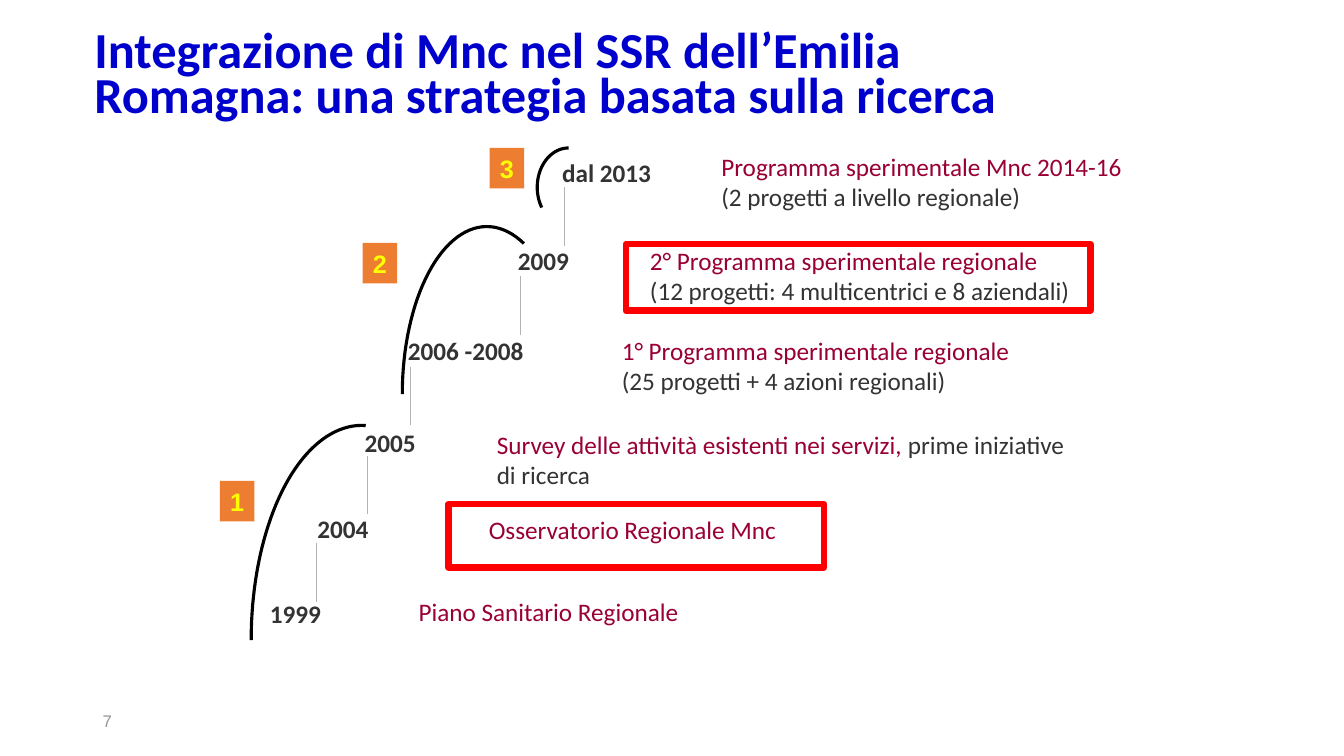
from dataclasses import dataclass
from math import cos, radians, sin

from lxml.etree import SubElement
from pptx import Presentation
from pptx.dml.color import RGBColor
from pptx.enum.shapes import MSO_CONNECTOR, MSO_SHAPE
from pptx.enum.text import MSO_ANCHOR, PP_ALIGN
from pptx.oxml.ns import qn
from pptx.util import Cm, Pt


@dataclass(frozen=True)
class Theme:
    title: str = "0000CC"
    accent: str = "990033"
    body: str = "333333"
    number: str = "969696"
    step: str = "B2B2B2"
    badge: str = "ED7D31"
    badge_text: str = "FFFF00"
    arc: str = "000000"
    frame: str = "FF0000"
    font: str = "Calibri"
    plain_font: str = "Arial"
    title_size: int = 36
    text_size: int = 18
    number_size: int = 12


THEME = Theme()
LINE_HEIGHT = 1.02
STEP_HEIGHT = 1.47

# Year, left, top, width
YEARS = [
    ("dal 2013", 13.92, 3.84, 4.01),
    ("2009", 12.8, 6.05, 1.8),
    ("2006 -2008", 10.03, 8.33, 3.6),
    ("2005", 8.94, 10.64, 1.8),
    ("2004", 7.75, 12.8, 1.8),
    ("1999", 6.55, 14.94, 1.8),
]
# Left, top, width, paragraphs of (text, colour) spans
MILESTONES = [
    (17.93, 3.68, 11.2, [[("Programma sperimentale Mnc 2014-16", THEME.accent)],
                         [("(2 progetti a livello regionale)", THEME.body)]]),
    (16.13, 6.05, 11.2, [[("2° Programma sperimentale regionale", THEME.accent)],
                         [("(12 progetti: 4 multicentrici e 8 aziendali)", THEME.body)]]),
    (15.42, 8.33, 11.51, [[("1° Programma sperimentale regionale", THEME.accent)],
                          [("(25 progetti + 4 azioni regionali)", THEME.body)]]),
    (12.27, 10.69, 15.06, [[("Survey delle attività esistenti nei servizi, ", THEME.accent),
                            ("prime iniziative di ricerca", THEME.body)]]),
    (12.07, 12.83, 12.87, [[("Osservatorio Regionale Mnc", THEME.accent)]]),
    (10.3, 14.91, 7.8, [[("Piano Sanitario Regionale", THEME.accent)]]),
]
# Left, top of each riser between two years
STEPS = [(14.22, 4.72), (13.11, 6.96), (10.34, 9.25), (9.25, 11.48), (7.98, 13.69)]
BADGES = [("1", 5.54, 12.12), ("2", 9.14, 6.12), ("3", 12.34, 3.73)]
# Centre x and y, radius x and y, start and end angle
ARCS = [
    (12.27, 9.93, 2.13, 4.22, 64, 180),
    (9.12, 16.13, 2.79, 5.41, 88, 180),
    (14.33, 4.72, 0.79, 0.99, 90, 211),
]
FRAMES = [(11.3, 12.7, 9.47, 1.6), (15.77, 6.15, 11.71, 1.68)]


def color(value):
    return RGBColor.from_string(value)


def style_font(font, size, value, name=THEME.font, bold=False):
    font.size = Pt(size)
    font.name = name
    font.bold = bold
    font.color.rgb = color(value)


def add_text(page, left, top, width, height, paragraphs, size=THEME.text_size,
             name=THEME.font, bold=False, anchor=MSO_ANCHOR.TOP):
    box = page.shapes.add_textbox(Cm(left), Cm(top), Cm(width), Cm(height))
    frame = box.text_frame
    frame.word_wrap = True
    frame.vertical_anchor = anchor
    for index, spans in enumerate(paragraphs):
        para = frame.add_paragraph() if index else frame.paragraphs[0]
        for text, value in spans:
            span = para.add_run()
            span.text = text
            style_font(span.font, size, value, name, bold)
    return box


def add_step(page, left, top):
    line = page.shapes.add_connector(MSO_CONNECTOR.STRAIGHT, Cm(left), Cm(top + STEP_HEIGHT),
                                     Cm(left), Cm(top))
    line.line.color.rgb = color(THEME.step)
    line.line.width = Pt(0.75)
    SubElement(line._element.spPr, qn("a:effectLst"))


def add_badge(page, text, left, top):
    badge = page.shapes.add_shape(MSO_SHAPE.RECTANGLE, Cm(left), Cm(top), Cm(0.87), Cm(LINE_HEIGHT))
    badge.shadow.inherit = False
    badge.fill.solid()
    badge.fill.fore_color.rgb = color(THEME.badge)
    badge.line.fill.background()
    frame = badge.text_frame
    frame.word_wrap = False
    frame.text = text
    para = frame.paragraphs[0]
    para.alignment = PP_ALIGN.CENTER
    style_font(para.runs[0].font, THEME.text_size, THEME.badge_text, THEME.plain_font, True)


def style_outline(shape, value, width):
    shape.shadow.inherit = False
    shape.fill.background()
    shape.line.color.rgb = color(value)
    shape.line.width = Pt(width)


def add_arc(page, center_x, center_y, radius_x, radius_y, start, end, pieces=40):
    angles = [radians(start + (end - start) * i / pieces) for i in range(pieces + 1)]
    points = [(Cm(center_x + radius_x * cos(a)), Cm(center_y - radius_y * sin(a))) for a in angles]
    builder = page.shapes.build_freeform(*points[0])
    builder.add_line_segments(points[1:], close=False)
    style_outline(builder.convert_to_shape(), THEME.arc, 2.25)


def add_frame(page, left, top, width, height):
    frame = page.shapes.add_shape(MSO_SHAPE.RECTANGLE, Cm(left), Cm(top), Cm(width), Cm(height))
    style_outline(frame, THEME.frame, 4.5)


def main():
    deck = Presentation()
    deck.slide_width, deck.slide_height = Cm(33.87), Cm(19.05)
    page = deck.slides.add_slide(deck.slide_layouts[6])

    # Title and page number
    title = add_text(page, 2.13, 1.02, 23.6, 1.85,
                     [[("Integrazione di Mnc nel SSR dell’Emilia Romagna: "
                        "una strategia basata sulla ricerca", THEME.title)]],
                     THEME.title_size, bold=True, anchor=MSO_ANCHOR.MIDDLE)
    title.text_frame.paragraphs[0].line_spacing = 0.75
    add_text(page, 2.34, 17.65, 7.62, LINE_HEIGHT, [[("7", THEME.number)]],
             THEME.number_size, THEME.plain_font, anchor=MSO_ANCHOR.MIDDLE)

    # Staircase of years with their milestones
    for year, left, top, width in YEARS:
        add_text(page, left, top, width, LINE_HEIGHT, [[(year, THEME.body)]], bold=True)
    for left, top, width, paragraphs in MILESTONES:
        height = LINE_HEIGHT if paragraphs[0][0][0].endswith("Mnc") else 1.8
        add_text(page, left, top, width, height, paragraphs)
    for step in STEPS:
        add_step(page, *step)

    # Numbered phases, their arcs and the highlights
    for badge in BADGES:
        add_badge(page, *badge)
    for arc in ARCS:
        add_arc(page, *arc)
    for frame in FRAMES:
        add_frame(page, *frame)

    deck.save("out.pptx")


if __name__ == "__main__":
    main()
